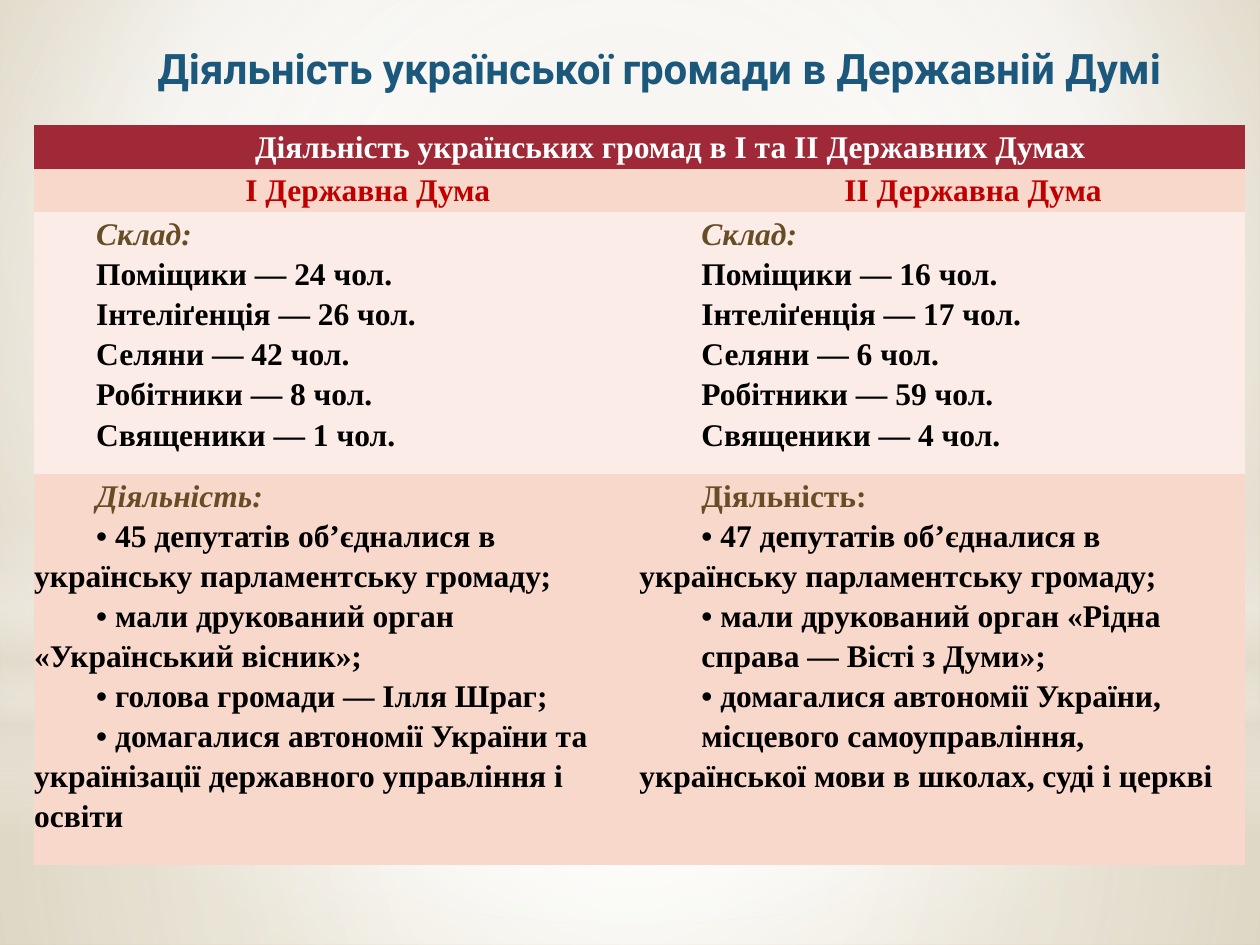
import pptx
import pptx.util
import pptx.dml.color
import pptx.enum.shapes
import pptx.enum.text
import pptx.oxml
import pptx.oxml.ns
from pptx.util import Cm

RGBColor = pptx.dml.color.RGBColor
qn = pptx.oxml.ns.qn
SHAPE = pptx.enum.shapes.MSO_SHAPE
CENTER = pptx.enum.text.PP_ALIGN.CENTER
WHITE = RGBColor(0xFF, 0xFF, 0xFF)
BLACK = RGBColor(0, 0, 0)
SAND = RGBColor(0xE3, 0xDE, 0xD1)
BEIGE = RGBColor(0xDE, 0xD7, 0xC4)
TAN = RGBColor(0xCA, 0xBB, 0x94)
BLUE = RGBColor(0x1B, 0x58, 0x7C)
CRIMSON = RGBColor(0x9F, 0x29, 0x36)
RED = RGBColor(0xC0, 0, 0)
BROWN = RGBColor(0x67, 0x4D, 0x26)
PINK = RGBColor(0xF9, 0xD8, 0xCC)
PALE = RGBColor(0xFC, 0xEC, 0xE7)


def set_gradient(fill, element, stops, center=None):
    fill.gradient()
    grad = next(element.iter(qn("a:gradFill")))
    gs = "".join(
        f'<a:gs pos="{pos * 1000}"><a:srgbClr val="{color}">'
        f'<a:alpha val="{alpha * 1000}"/></a:srgbClr></a:gs>'
        for pos, color, alpha in stops)
    if center:
        l, t, r, b = (v * 1000 for v in center)
        direction = (f'<a:path path="circle"><a:fillToRect l="{l}" t="{t}" '
                     f'r="{r}" b="{b}"/></a:path>')
    else:
        direction = '<a:lin ang="5400000" scaled="0"/>'
    new = pptx.oxml.parse_xml(
        '<a:gradFill xmlns:a="http://schemas.openxmlformats.org/drawingml/2006/main" '
        f'rotWithShape="1"><a:gsLst>{gs}</a:gsLst>{direction}</a:gradFill>')
    grad.getparent().replace(grad, new)


def format_run(r, font, size, color, italic=False):
    r.font.name = font
    r.font.size = pptx.util.Pt(size)
    r.font.bold = True
    r.font.italic = italic
    r.font.color.rgb = color


prs = pptx.Presentation()
prs.slide_width, prs.slide_height = Cm(25.4), Cm(19.05)
s = prs.slides.add_slide(prs.slide_layouts[6])
set_gradient(s.background.fill, s._element,
             [(0, BEIGE, 100), (60, WHITE, 100), (100, TAN, 100)], (20, 10, 20, 60))

MIDDLE = (50, 50, 50, 50)
layers = [
    (SHAPE.RECTANGLE, 14.17, 4.88, [(0, WHITE, 91), (37, WHITE, 76), (100, SAND, 79)], MIDDLE),
    (SHAPE.RECTANGLE, 0, 14.17, [(0, WHITE, 89), (48, WHITE, 62), (100, SAND, 79)], MIDDLE),
    (SHAPE.RECTANGLE, 10.46, 6.35, [(0, WHITE, 0), (29, WHITE, 30), (45, SAND, 40),
                                    (55, WHITE, 26), (65, SAND, 60), (100, WHITE, 0)], None),
    (SHAPE.OVAL, 4.45, 14.17, [(0, WHITE, 100), (56, WHITE, 0)], MIDDLE),
]
for kind, top, height, stops, center in layers:
    sp = s.shapes.add_shape(kind, 0, Cm(top), prs.slide_width, Cm(height))
    sp.shadow.inherit = False
    sp.line.fill.background()
    set_gradient(sp.fill, sp._element, stops, center)

title = s.shapes.add_textbox(Cm(1.7), Cm(0.74), Cm(23.4), Cm(1.27))
tf = title.text_frame
tf.word_wrap = True
tf.text = "Діяльність української громади в Державній Думі "
tf.paragraphs[0].alignment = CENTER
format_run(tf.paragraphs[0].runs[0], "Roboto", 24, BLUE)

rows = [
    (0.88, CRIMSON, WHITE, ["Діяльність українських громад в І та ІІ Державних Думах"]),
    (0.88, PINK, RED, ["І Державна Дума", "ІІ Державна Дума"]),
    (5.27, PALE, BLACK, [
        "Склад:\nПоміщики — 24 чол.\nІнтеліґенція — 26 чол.\nСеляни — 42 чол.\n"
        "Робітники — 8 чол.\nСвященики — 1 чол.",
        "Склад:\nПоміщики — 16 чол.\nІнтеліґенція — 17 чол.\nСеляни — 6 чол.\n"
        "Робітники — 59 чол.\nСвященики — 4 чол."]),
    (7.88, PINK, BLACK, [
        "Діяльність:\n• 45 депутатів об’єдналися в українську парламентську громаду;\n"
        "• мали друкований орган «Український вісник»;\n"
        "• голова громади — Ілля Шраг;\n"
        "• домагалися автономії України та українізації державного управління і освіти",
        "Діяльність:\n• 47 депутатів об’єдналися в українську парламентську громаду;\n"
        "• мали друкований орган «Рідна\nсправа — Вісті з Думи»;\n"
        "• домагалися автономії України,\n"
        "місцевого самоуправління, української мови в школах, суді і церкві"]),
]
frame = s.shapes.add_table(len(rows), 2, Cm(0.69), Cm(2.52), Cm(24.4), Cm(14.91))
table = frame.table
next(frame._element.iter(qn("a:tableStyleId"))).text = "{2D5ABB26-0587-4C30-8999-92F81FD0307C}"
table.cell(0, 0).merge(table.cell(0, 1))
for i, (height, fill, color, texts) in enumerate(rows):
    table.rows[i].height = Cm(height)
    for j, text in enumerate(texts):
        cell = table.cell(i, j)
        cell.fill.solid()
        cell.fill.fore_color.rgb = fill
        cell.margin_left = cell.margin_right = cell.margin_top = cell.margin_bottom = 0
        cell.text_frame.text = text
        for n, p in enumerate(cell.text_frame.paragraphs):
            p.line_spacing = 1.15
            p._p.get_or_add_pPr().set("indent", str(Cm(1.25)))
            if i < 2:
                p.alignment = CENTER
            heading = i >= 2 and n == 0
            format_run(p.runs[0], "Times New Roman", 18, BROWN if heading else color,
                       heading and (i, j) != (3, 1))

prs.save("out.pptx")
